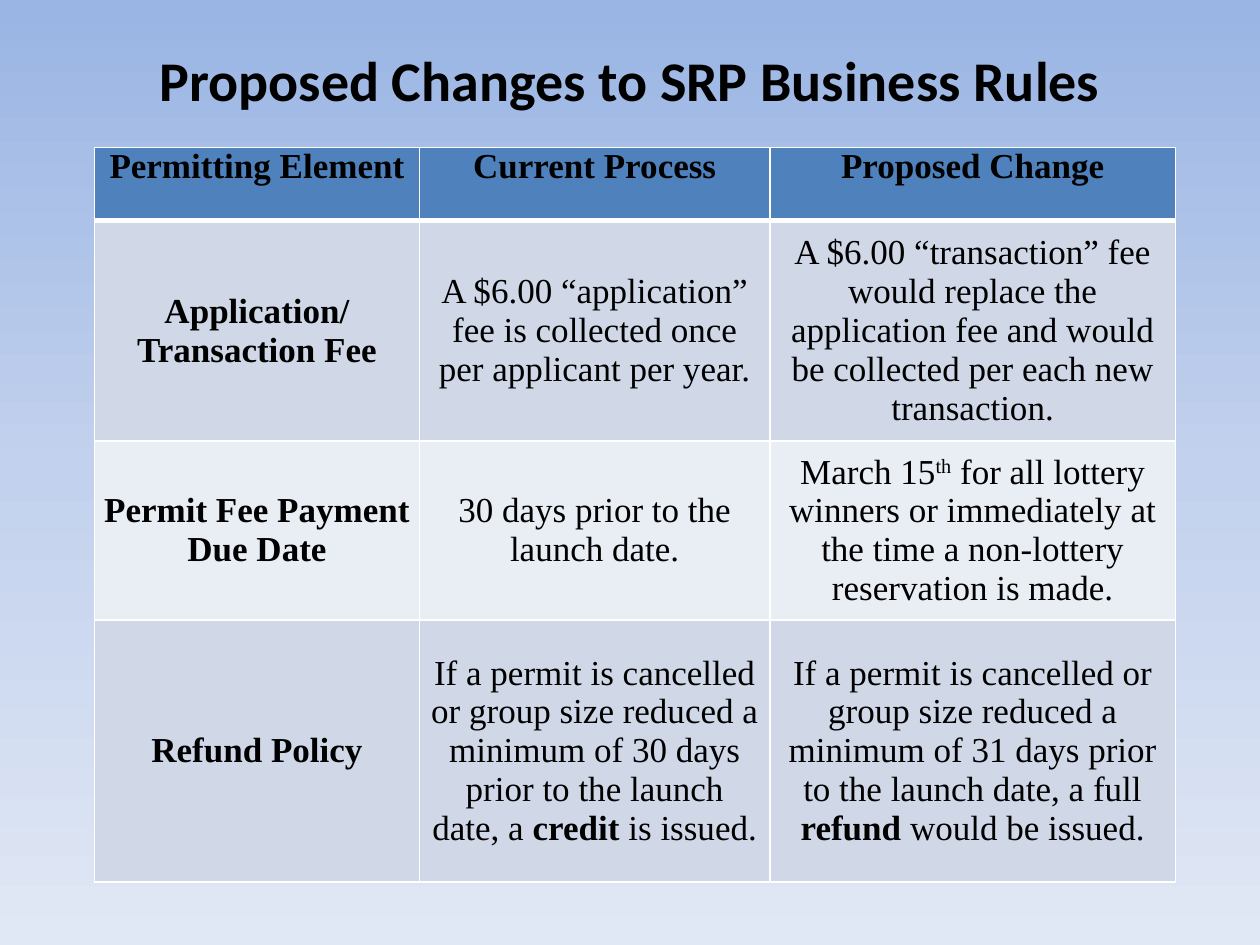
import pptx
import pptx.dml.color
import pptx.enum.text
import pptx.oxml
import pptx.oxml.ns
import pptx.util

Inches, Pt = pptx.util.Inches, pptx.util.Pt
MIDDLE = pptx.enum.text.MSO_ANCHOR.MIDDLE
CENTER = pptx.enum.text.PP_ALIGN.CENTER
qn = pptx.oxml.ns.qn

TITLE = "Proposed Changes to SRP Business Rules"
BACKGROUND_STOPS = [(0, "9AB5E4"), (50, "C2D1ED"), (100, "E1E8F5")]
HEADER_FILL = "4F81BD"
BAND_FILLS = ["D0D8E8", "E9EDF4"]
COLUMN_WIDTHS = [2.58, 2.78, 3.22]
ROW_HEIGHTS = [0.58, 1.75, 1.42, 2.08]

PLAIN, BOLD, SUPER = "plain", "bold", "super"
RULES = [
    [
        [[("Permitting Element", BOLD)]],
        [[("Current Process", BOLD)]],
        [[("Proposed Change", BOLD)]],
    ],
    [
        [[("Application/", BOLD)], [("Transaction Fee", BOLD)]],
        [[("A $6.00 “application” fee is collected once per applicant per year.", PLAIN)]],
        [[("A $6.00 “transaction” fee would replace the application fee and "
           "would be collected per each new transaction.", PLAIN)]],
    ],
    [
        [[("Permit Fee Payment Due Date", BOLD)]],
        [[("30 days prior to the launch date.", PLAIN)]],
        [[("March 15", PLAIN), ("th", SUPER),
          (" for all lottery winners or immediately at the time a "
           "non-lottery reservation is made.", PLAIN)]],
    ],
    [
        [[("Refund Policy", BOLD)]],
        [[("If a permit is cancelled or group size reduced a minimum of 30 days "
           "prior to the launch date, a ", PLAIN),
          ("credit", BOLD), (" is issued.", PLAIN)]],
        [[("If a permit is cancelled or group size reduced a minimum of 31 days "
           "prior to the launch date, a full ", PLAIN),
          ("refund ", BOLD), ("would be issued.", PLAIN)]],
    ],
]


def rgb(value):
    return pptx.dml.color.RGBColor.from_string(value)


def add_run(paragraph, text, face, size, style):
    run = paragraph.add_run()
    run.text = text
    run.font.name = face
    run.font.size = Pt(size)
    run.font.bold = style == BOLD
    run.font.color.rgb = rgb("000000")
    if style == SUPER:
        run.font._element.set("baseline", "30000")


def paint_background(slide):
    fill = slide.background.fill
    fill.gradient()
    fill.gradient_angle = 270
    stops = next(slide._element.iter(qn("a:gsLst")))
    for stop in list(stops):
        stops.remove(stop)
    for position, color in BACKGROUND_STOPS:
        stop = pptx.oxml.parse_xml(
            f'<a:gs {pptx.oxml.ns.nsdecls("a")} pos="{position * 1000}">'
            f'<a:srgbClr val="{color}"/></a:gs>')
        stops.append(stop)


def add_borders(cell, top, bottom):
    properties = cell._tc.get_or_add_tcPr()
    for side, width in (("L", 1), ("R", 1), ("T", top), ("B", bottom)):
        properties.append(pptx.oxml.parse_xml(
            f'<a:ln{side} {pptx.oxml.ns.nsdecls("a")} w="{Pt(width)}">'
            f'<a:solidFill><a:srgbClr val="FFFFFF"/></a:solidFill></a:ln{side}>'))


def fill_cell(cell, paragraphs, row):
    add_borders(cell, 3 if row == 1 else 1, 3 if row == 0 else 1)
    cell.fill.solid()
    cell.fill.fore_color.rgb = rgb(BAND_FILLS[(row - 1) % 2] if row else HEADER_FILL)
    cell.margin_left = cell.margin_right = Inches(0.07)
    cell.margin_top = cell.margin_bottom = 0
    if row:
        cell.vertical_anchor = MIDDLE
    frame = cell.text_frame
    for index, runs in enumerate(paragraphs):
        paragraph = frame.add_paragraph() if index else frame.paragraphs[0]
        paragraph.alignment = CENTER
        for text, style in runs:
            add_run(paragraph, text, "Times New Roman", 20, style)


def main():
    deck = pptx.Presentation()
    deck.slide_width, deck.slide_height = Inches(10), Inches(7.5)
    slide = deck.slides.add_slide(deck.slide_layouts[5])
    paint_background(slide)

    title = slide.shapes.title
    title.left, title.top = Inches(0.5), Inches(0)
    title.width, title.height = Inches(9), Inches(1.25)
    title.text_frame.vertical_anchor = MIDDLE
    heading = title.text_frame.paragraphs[0]
    heading.alignment = CENTER
    add_run(heading, TITLE, "Calibri", 32, BOLD)

    rules = slide.shapes.add_table(
        len(ROW_HEIGHTS), len(COLUMN_WIDTHS), Inches(0.75), Inches(1.17),
        Inches(sum(COLUMN_WIDTHS)), Inches(sum(ROW_HEIGHTS))).table
    for column, width in zip(rules.columns, COLUMN_WIDTHS):
        column.width = Inches(width)
    for row, height in zip(rules.rows, ROW_HEIGHTS):
        row.height = Inches(height)
    for row, entries in enumerate(RULES):
        for column, paragraphs in enumerate(entries):
            fill_cell(rules.cell(row, column), paragraphs, row)

    deck.save("out.pptx")


if __name__ == "__main__":
    main()
